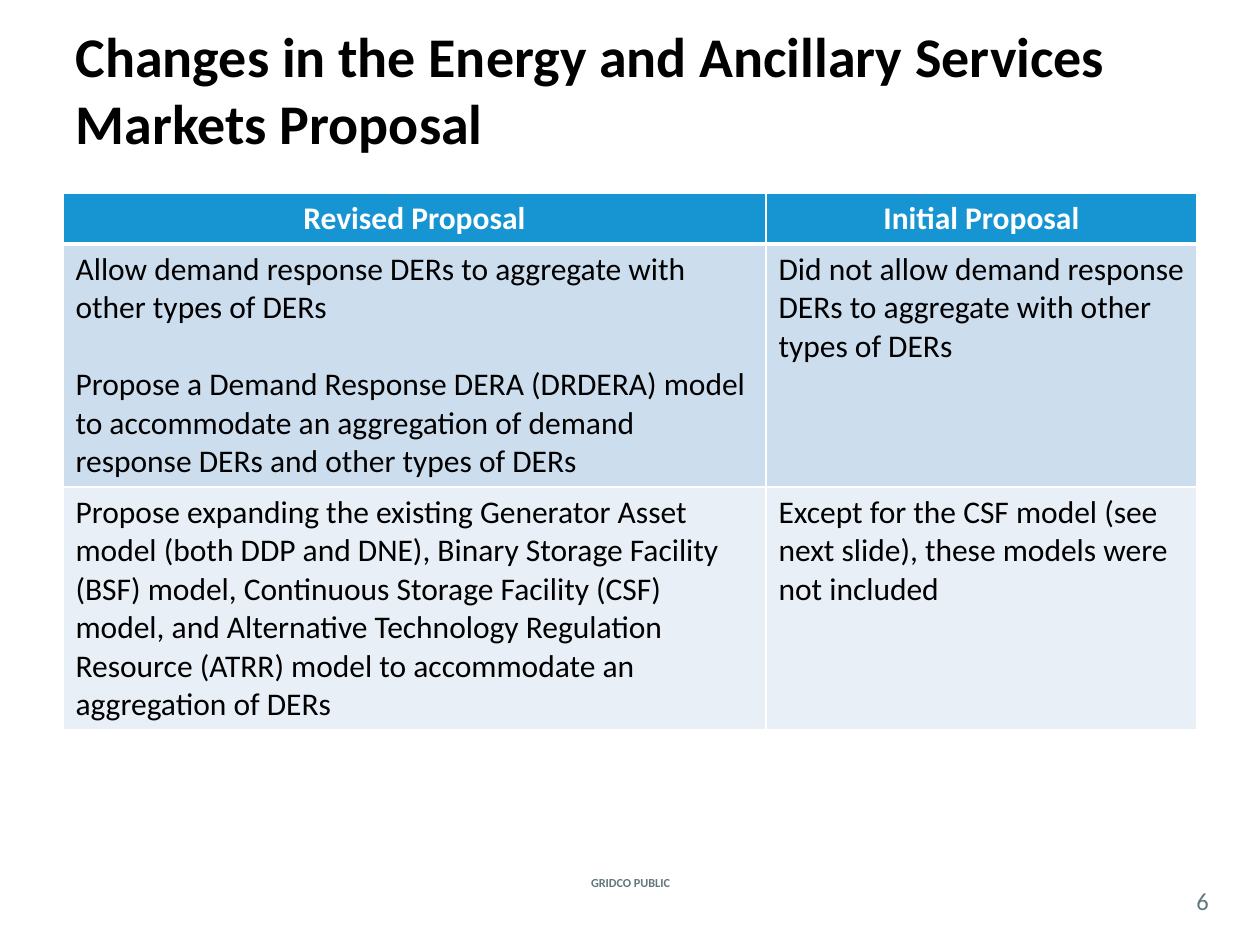
from lxml.etree import SubElement
from pptx import Presentation
from pptx.dml.color import RGBColor
from pptx.enum.text import MSO_ANCHOR, MSO_AUTO_SIZE, PP_ALIGN
from pptx.oxml.ns import qn
from pptx.util import Emu, Pt

BLACK = RGBColor(0x00, 0x00, 0x00)
WHITE = RGBColor(0xFF, 0xFF, 0xFF)
GRAY = RGBColor(0x62, 0x77, 0x7F)
HEADER_BLUE = RGBColor(0x17, 0x95, 0xD2)
ROW_FILLS = [RGBColor(0xCC, 0xDD, 0xEE), RGBColor(0xE8, 0xEF, 0xF7)]

PIXELS_PER_INCH = 126
FONT = "Calibri"
BODY_SIZE = 18
BODY_LINE = 22

COLUMN_WIDTHS = [703, 431]
ROW_HEIGHTS = [51, 243, 243]
HEADERS = ["Revised Proposal", "Initial Proposal"]
ROWS = [
    [
        "Allow demand response DERs to aggregate with other types of DERs\n"
        "Propose a Demand Response DERA (DRDERA) model to accommodate an "
        "aggregation of demand response DERs and other types of DERs",
        "Did not allow demand response DERs to aggregate with other types of DERs",
    ],
    [
        "Propose expanding the existing Generator Asset model (both DDP and DNE), "
        "Binary Storage Facility (BSF) model, Continuous Storage Facility (CSF) "
        "model, and Alternative Technology Regulation Resource (ATRR) model to "
        "accommodate an aggregation of DERs",
        "Except for the CSF model (see next slide), these models were not included",
    ],
]


def px(length):
    return Emu(round(length * 914400 / PIXELS_PER_INCH))


class SlideBuilder:
    """Holds the text style and the slide being filled."""

    def __init__(self, slide):
        self.slide = slide

    def set_text(self, text_frame, text, size, color, bold=False, align=PP_ALIGN.LEFT):
        text_frame.text = text
        for paragraph in text_frame.paragraphs:
            paragraph.alignment = align
            for run in paragraph.runs:
                run.font.name = FONT
                run.font.size = Pt(size)
                run.font.bold = bold
                run.font.color.rgb = color

    def place(self, shape, left, top, width, height):
        shape.left, shape.top = px(left), px(top)
        shape.width, shape.height = px(width), px(height)

    def title(self, text, *box):
        shape = self.slide.shapes.title
        self.place(shape, *box)
        text_frame = shape.text_frame
        text_frame.auto_size = MSO_AUTO_SIZE.NONE
        text_frame.vertical_anchor = MSO_ANCHOR.MIDDLE
        self.set_text(text_frame, text, 32, BLACK, bold=True)

    def label(self, text, size, bold, *box):
        """Add a gray footer text, centred both ways with no margins."""
        shape = self.slide.shapes.add_textbox(*map(px, box))
        text_frame = shape.text_frame
        text_frame.word_wrap = True
        text_frame.vertical_anchor = MSO_ANCHOR.MIDDLE
        text_frame.margin_left = text_frame.margin_right = 0
        text_frame.margin_top = text_frame.margin_bottom = 0
        self.set_text(text_frame, text, size, GRAY, bold, PP_ALIGN.CENTER)

    def cell(self, cell, text, fill, is_header, top_width, bottom_width):
        cell.fill.solid()
        cell.fill.fore_color.rgb = fill
        self.borders(cell, L=1, R=1, T=top_width, B=bottom_width)
        if is_header:
            self.set_text(cell.text_frame, text, BODY_SIZE, WHITE, True, PP_ALIGN.CENTER)
        else:
            self.set_text(cell.text_frame, text, BODY_SIZE, BLACK)
            for paragraph in cell.text_frame.paragraphs[1:]:
                paragraph.space_before = Pt(BODY_LINE)

    def borders(self, cell, **widths):
        """Draw white cell borders, widths in points by side letter."""
        properties = cell._tc.get_or_add_tcPr()
        for index, (side, width) in enumerate(widths.items()):
            line = SubElement(properties, qn(f"a:ln{side}"), w=str(Pt(width)))
            solid = SubElement(line, qn("a:solidFill"))
            SubElement(solid, qn("a:srgbClr"), val=str(WHITE))
            properties.insert(index, line)

    def table(self, left, top):
        size = sum(COLUMN_WIDTHS), sum(ROW_HEIGHTS)
        table = self.slide.shapes.add_table(
            len(ROW_HEIGHTS), len(COLUMN_WIDTHS), *map(px, (left, top, *size))
        ).table
        for column, width in zip(table.columns, COLUMN_WIDTHS):
            column.width = px(width)
        for row, height in zip(table.rows, ROW_HEIGHTS):
            row.height = px(height)
        fills = [HEADER_BLUE, *ROW_FILLS]
        for r, (texts, fill) in enumerate(zip([HEADERS, *ROWS], fills)):
            top_width = 3 if r == 1 else 1
            bottom_width = 3 if r == 0 else 1
            for c, text in enumerate(texts):
                self.cell(table.cell(r, c), text, fill, r == 0, top_width, bottom_width)


def main():
    presentation = Presentation()
    presentation.slide_width, presentation.slide_height = px(1260), px(945)
    title_only = presentation.slide_layouts[5]
    builder = SlideBuilder(presentation.slides.add_slide(title_only))
    builder.label("GRIDCO PUBLIC", 7, True, 538, 851, 185, 63)
    builder.title(
        "Changes in the Energy and Ancillary Services Markets Proposal",
        63, 10, 1134, 158,
    )
    builder.table(63, 193)
    builder.label("6", 14, False, 1176, 882, 53, 37)
    presentation.save("out.pptx")


if __name__ == "__main__":
    main()
